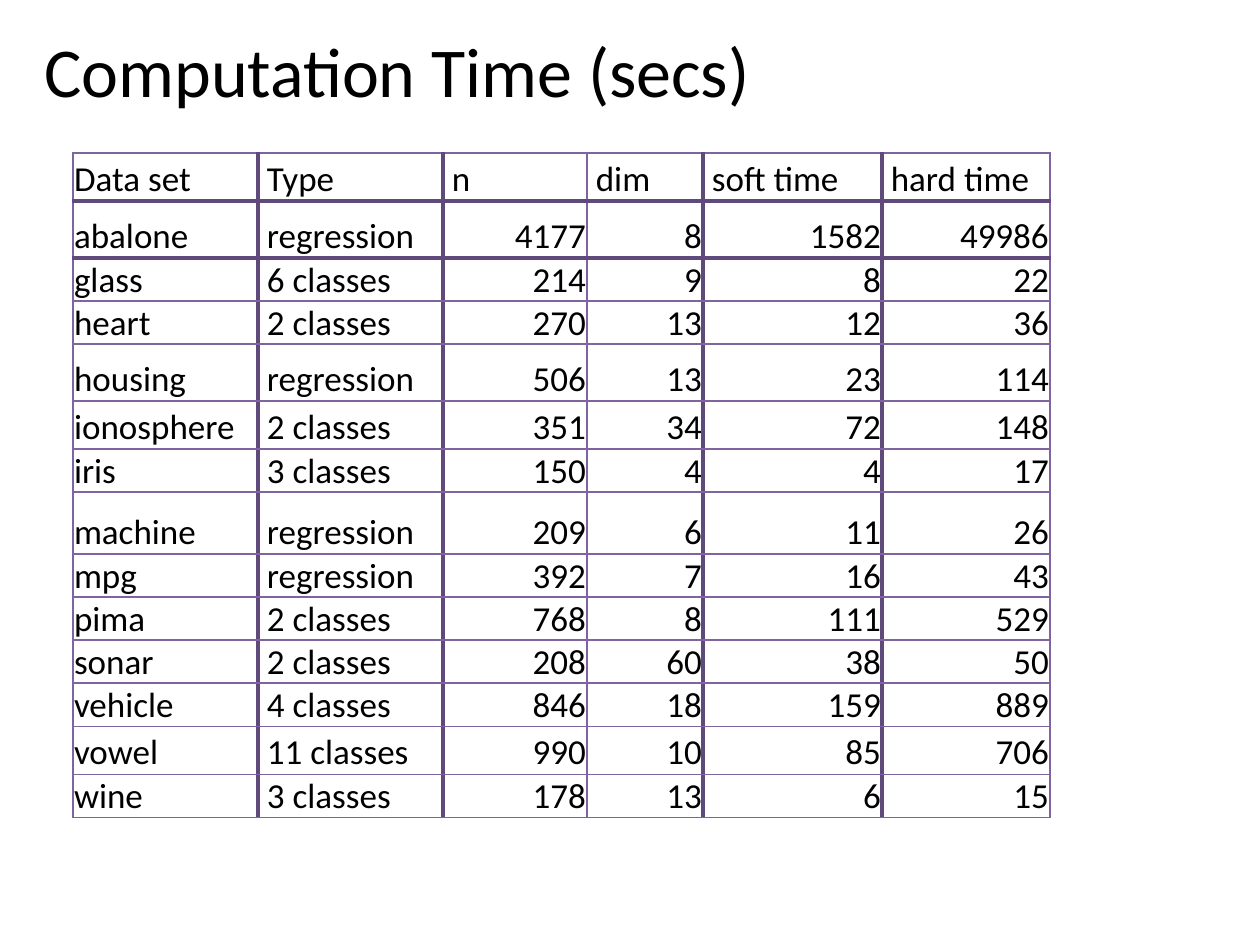
from lxml.etree import SubElement
from pptx import Presentation
from pptx.dml.color import RGBColor
from pptx.enum.text import MSO_ANCHOR, MSO_AUTO_SIZE, PP_ALIGN
from pptx.oxml.ns import qn
from pptx.util import Pt

PX = 914400 // 126
FONT = "Calibri"
COLORS = {"text": "000000", "thin": "8064A2", "thick": "604A7B"}
LINE_WIDTHS = {"thin": Pt(1), "thick": Pt(3)}

COLUMN_WIDTHS = [185, 185, 144, 116, 179, 168]
ROW_HEIGHTS = [48, 57, 40, 40, 57, 48, 40, 62, 42, 40, 40, 40, 48, 40]
HEADER = ["Data set", " Type", " n", " dim", " soft time", " hard time"]
RESULTS = [
    ["abalone", " regression", 4177, 8, 1582, 49986],
    ["glass", " 6 classes", 214, 9, 8, 22],
    ["heart", " 2 classes", 270, 13, 12, 36],
    ["housing", " regression", 506, 13, 23, 114],
    ["ionosphere", " 2 classes", 351, 34, 72, 148],
    ["iris", " 3 classes", 150, 4, 4, 17],
    ["machine", " regression", 209, 6, 11, 26],
    ["mpg", " regression", 392, 7, 16, 43],
    ["pima", " 2 classes", 768, 8, 111, 529],
    ["sonar", " 2 classes", 208, 60, 38, 50],
    ["vehicle", " 4 classes", 846, 18, 159, 889],
    ["vowel", " 11 classes", 990, 10, 85, 706],
    ["wine", " 3 classes", 178, 13, 6, 15],
]


def px(length):
    return length * PX


def add_run(paragraph, text, size):
    run = paragraph.add_run()
    run.text = text
    run.font.name = FONT
    run.font.size = Pt(size)
    run.font.color.rgb = RGBColor.from_string(COLORS["text"])


def add_title(slide, text):
    frame = slide.shapes.add_textbox(px(32), px(21), px(738), px(97)).text_frame
    frame.word_wrap = False
    frame.auto_size = MSO_AUTO_SIZE.SHAPE_TO_FIT_TEXT
    add_run(frame.paragraphs[0], text, 40)


def set_borders(cell, row, column):
    """Rule off the name, type, size and soft-time columns and the first two rows."""
    thick_sides = {
        "L": column in (1, 4),
        "R": column in (0, 1, 3, 4),
        "T": row == 1,
        "B": row in (0, 1),
    }
    properties = cell._tc.get_or_add_tcPr()
    for side, is_thick in thick_sides.items():
        style = "thick" if is_thick else "thin"
        line = SubElement(properties, qn(f"a:ln{side}"), w=str(LINE_WIDTHS[style]))
        fill = SubElement(line, qn("a:solidFill"))
        SubElement(fill, qn("a:srgbClr"), val=COLORS[style])


def fill_cell(cell, value):
    cell.vertical_anchor = MSO_ANCHOR.BOTTOM
    cell.margin_left = cell.margin_right = cell.margin_top = px(1)
    cell.margin_bottom = 0
    paragraph = cell.text_frame.paragraphs[0]
    if isinstance(value, int):
        paragraph.alignment = PP_ALIGN.RIGHT
    add_run(paragraph, str(value), 20)


def add_results_table(slide, rows):
    table = slide.shapes.add_table(
        len(rows), len(COLUMN_WIDTHS), px(73), px(153),
        px(sum(COLUMN_WIDTHS)), px(sum(ROW_HEIGHTS)),
    ).table
    table.first_row = table.horz_banding = False
    for column, width in zip(table.columns, COLUMN_WIDTHS):
        column.width = px(width)
    for row, height in zip(table.rows, ROW_HEIGHTS):
        row.height = px(height)
    for row_index, values in enumerate(rows):
        for column_index, value in enumerate(values):
            cell = table.cell(row_index, column_index)
            fill_cell(cell, value)
            set_borders(cell, row_index, column_index)
            cell.fill.background()


def main():
    presentation = Presentation()
    presentation.slide_width = px(1260)
    presentation.slide_height = px(945)
    slide = presentation.slides.add_slide(presentation.slide_layouts[6])
    add_title(slide, "Computation Time (secs)")
    add_results_table(slide, [HEADER, *RESULTS])
    presentation.save("out.pptx")


if __name__ == "__main__":
    main()
